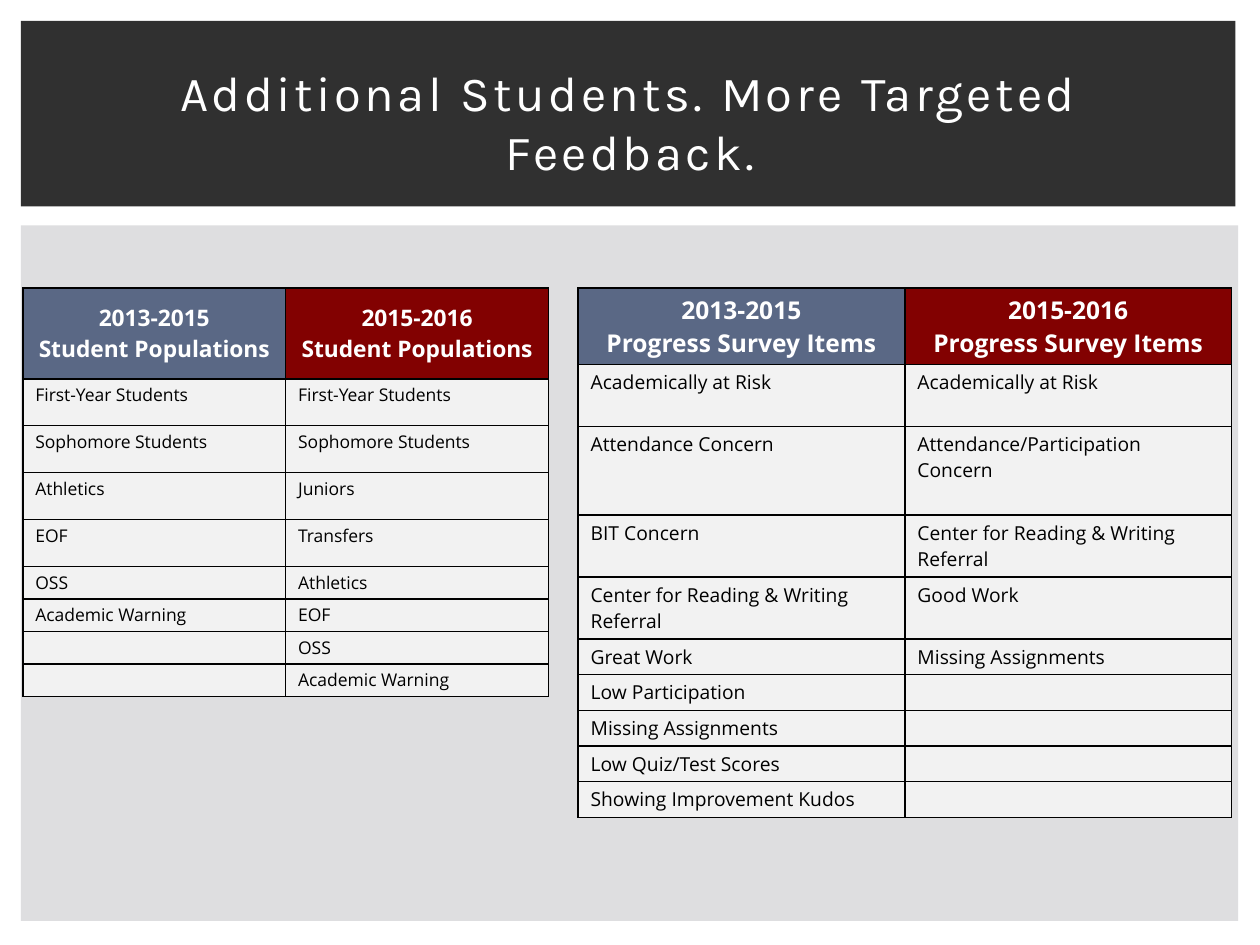
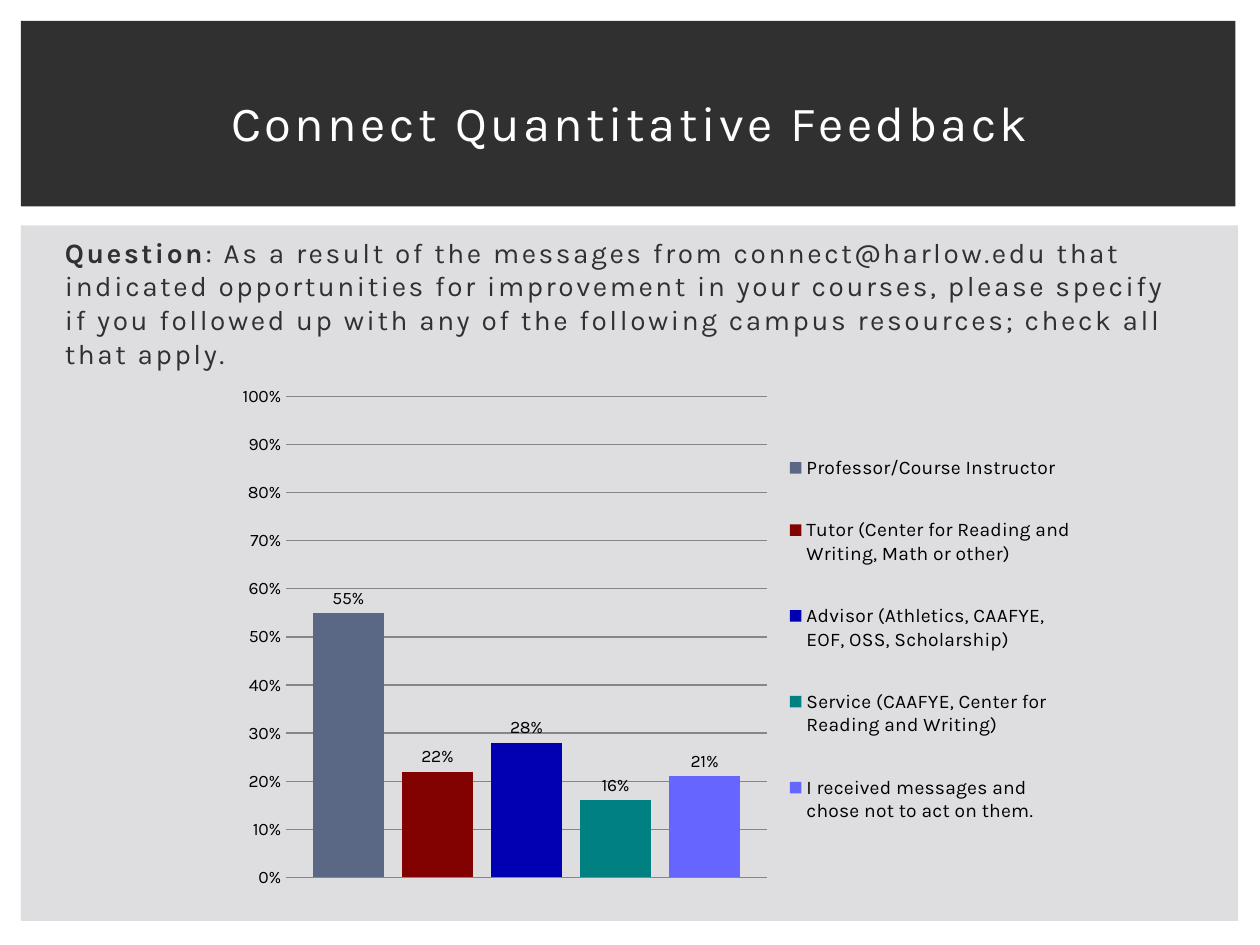
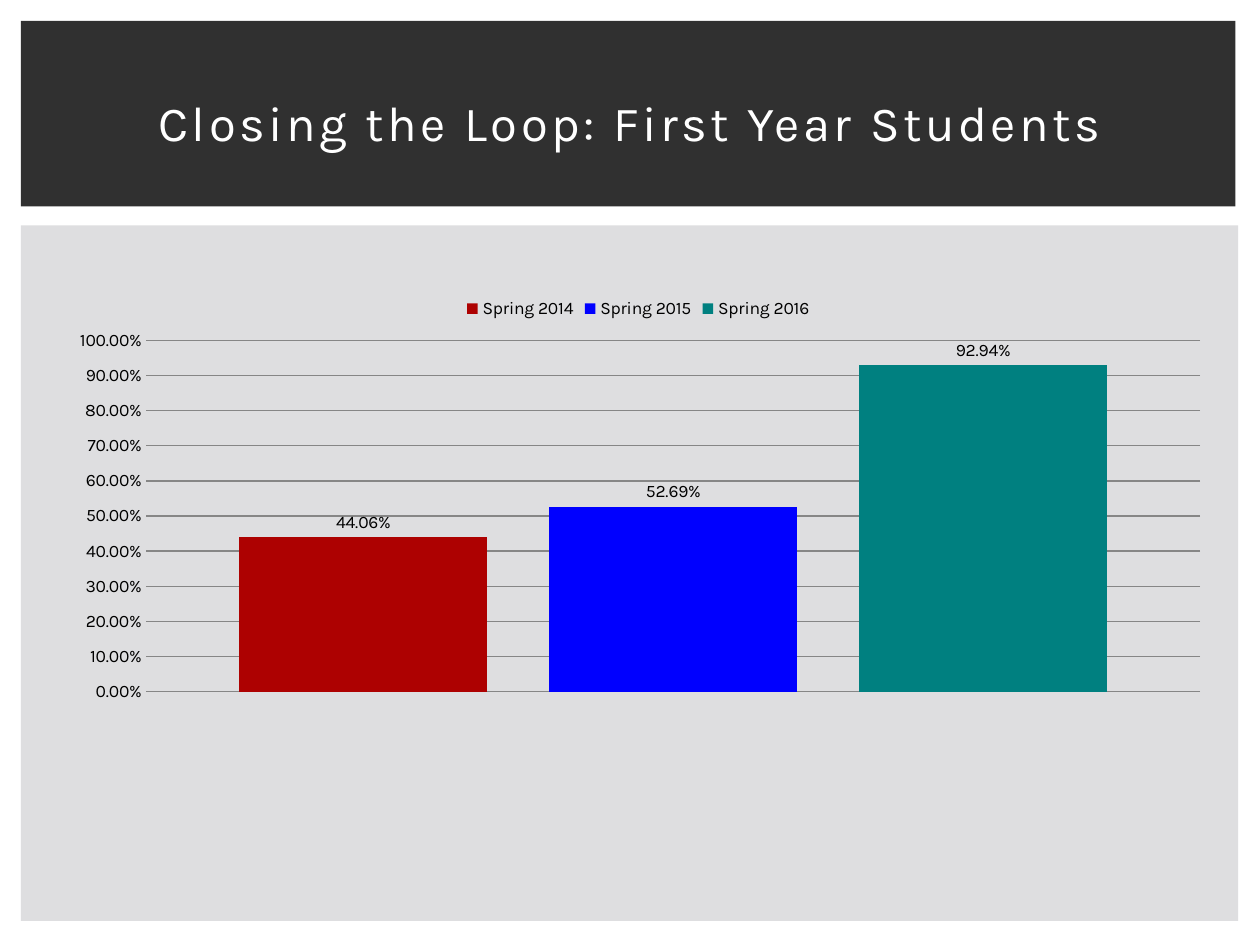
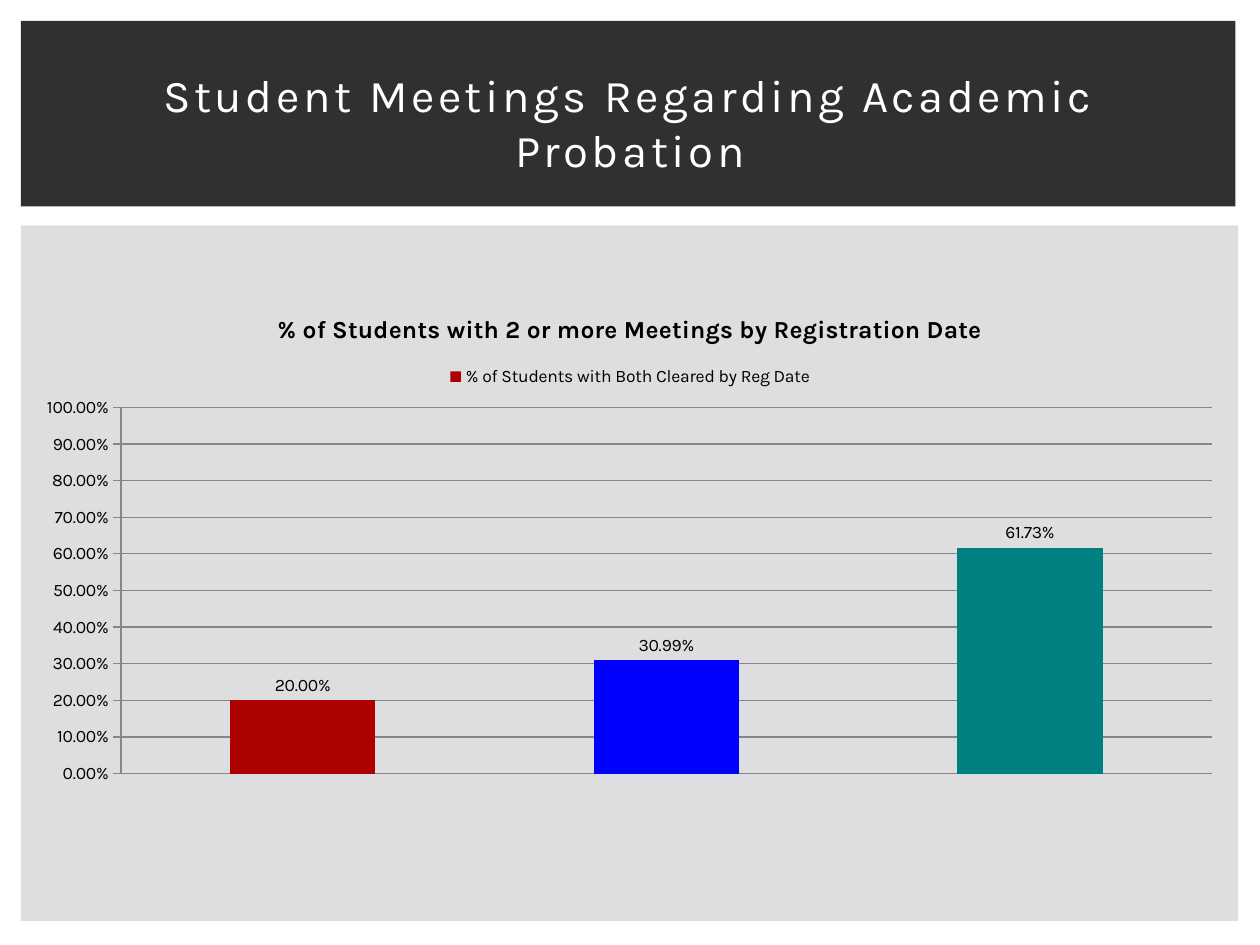
from dataclasses import dataclass

from lxml import etree
from pptx import Presentation
from pptx import util as u
from pptx.chart import data as chart_data
from pptx.dml.color import RGBColor
from pptx.enum import chart as charts, shapes, text
from pptx.oxml import ns


@dataclass(frozen=True)
class Theme:
    band: str = "303030"
    panel: str = "DEDEE0"
    white: str = "FFFFFF"
    black: str = "000000"
    grid: str = "868686"
    cell: str = "F2F2F2"
    slate: str = "5A6885"
    maroon: str = "820101"
    red: str = "AD0101"
    navy: str = "0000B2"
    blue: str = "0000FF"
    teal: str = "008080"
    violet: str = "6666FF"
    font: str = "Karla"
    table_font: str = "Open Sans"
    title: float = 28
    long_title: float = 26
    question: float = 16
    chart_title: float = 14
    legend: float = 11
    chart: float = 10


theme = Theme()
rgb = RGBColor.from_string


def style(paragraph, font, size, color, bold=False, spacing=0):
    for run in paragraph.runs:
        run.font.name = font
        run.font.size = u.Pt(size)
        run.font.color.rgb = rgb(color)
        run.font.bold = bold
        if spacing:
            run.font._element.set("spc", str(int(spacing * 100)))


def place(part, index, target, box):
    for old in part.findall(ns.qn("c:layout")):
        part.remove(old)
    layout = etree.Element(ns.qn("c:layout"))
    manual = etree.SubElement(layout, ns.qn("c:manualLayout"))
    settings = [("layoutTarget", target)] if target else []
    settings += [("xMode", "edge"), ("yMode", "edge"), *zip("xywh", box)]
    for tag, value in settings:
        etree.SubElement(manual, ns.qn(f"c:{tag}"), val=str(value))
    part.insert(index, layout)


prs = Presentation()
prs.slide_width, prs.slide_height = u.Pt(720), u.Pt(540)

titles = [
    ("Additional Students. More Targeted Feedback.", theme.title),
    ("Connect Quantitative Feedback", theme.title),
    ("Closing the Loop: First Year Students", theme.title),
    ("Student Meetings Regarding Academic Probation", theme.long_title),
]
slides = []
for wording, size in titles:
    slide = prs.slides.add_slide(prs.slide_layouts[6])
    for color, top, width, height in [
        (theme.panel, 128.8, 695.5, 397.4),
        (theme.band, 12, 694, 106),
    ]:
        block = slide.shapes.add_shape(
            shapes.MSO_SHAPE.RECTANGLE, u.Pt(12), u.Pt(top), u.Pt(width), u.Pt(height)
        )
        block.shadow.inherit = False
        block.fill.solid()
        block.fill.fore_color.rgb = rgb(color)
        block.line.fill.background()
    heading = slide.shapes.add_textbox(u.Pt(30), u.Pt(28), u.Pt(660), u.Pt(83)).text_frame
    heading.word_wrap = True
    heading.vertical_anchor = text.MSO_ANCHOR.MIDDLE
    heading.text = wording
    heading.paragraphs[0].alignment = text.PP_ALIGN.CENTER
    style(heading.paragraphs[0], theme.font, size, theme.white, spacing=2)
    slides.append(slide)

populations = [
    ("2013-2015\nStudent Populations", "2015-2016\nStudent Populations"),
    ("First-Year Students", "First-Year Students"),
    ("Sophomore Students", "Sophomore Students"),
    ("Athletics", "Juniors"),
    ("EOF", "Transfers"),
    ("OSS", "Athletics"),
    ("Academic Warning", "EOF"),
    ("", "OSS"),
    ("", "Academic Warning"),
]
survey_items = [
    ("2013-2015\nProgress Survey Items", "2015-2016\nProgress Survey Items"),
    ("Academically at Risk", "Academically at Risk"),
    ("Attendance Concern", "Attendance/Participation Concern"),
    ("BIT Concern", "Center for Reading & Writing Referral"),
    ("Center for Reading & Writing Referral", "Good Work"),
    ("Great Work", "Missing Assignments"),
    ("Low Participation", ""),
    ("Missing Assignments", ""),
    ("Low Quiz/Test Scores", ""),
    ("Showing Improvement Kudos", ""),
]
comparisons = [
    (populations, 13, 150.2, [51.8] + [26.8] * 4 + [18.6] * 4, 13, 10, 2.4),
    (survey_items, 330.3, 186.8, [43.5, 35.5, 50.5, 35.5, 35.5] + [20.4] * 5, 14, 11, 2.7),
]
for rows, left, column_width, heights, head_size, body_size, inset in comparisons:
    table = slides[0].shapes.add_table(
        len(rows), 2, u.Pt(left), u.Pt(164.7), u.Pt(2 * column_width), u.Pt(sum(heights))
    ).table
    for column in table.columns:
        column.width = u.Pt(column_width)
    for r, (entries, height) in enumerate(zip(rows, heights)):
        table.rows[r].height = u.Pt(height)
        for c, entry in enumerate(entries):
            cell = table.cell(r, c)
            cell.margin_left = cell.margin_right = u.Pt(7.2)
            cell.margin_top = cell.margin_bottom = u.Pt(inset)
            cell.text_frame.text = entry
            size = body_size if r else head_size
            for paragraph in cell.text_frame.paragraphs:
                style(paragraph, theme.table_font, size, theme.black if r else theme.white, r == 0)
                etree.SubElement(paragraph._p, ns.qn("a:endParaRPr"), sz=str(size * 100))
                if r == 0:
                    paragraph.alignment = text.PP_ALIGN.CENTER
            cell.vertical_anchor = text.MSO_ANCHOR.TOP if r else text.MSO_ANCHOR.MIDDLE
            for side in ("lnL", "lnR", "lnT", "lnB"):
                border = etree.SubElement(
                    cell._tc.get_or_add_tcPr(), ns.qn(f"a:{side}"), w=str(u.Pt(1))
                )
                ink = etree.SubElement(border, ns.qn("a:solidFill"))
                etree.SubElement(ink, ns.qn("a:srgbClr"), val=theme.black)
            cell.fill.solid()
            cell.fill.fore_color.rgb = rgb(theme.cell if r else (theme.slate, theme.maroon)[c])

resources = [
    ("Professor/Course Instructor", [0.55], [theme.slate]),
    ("Tutor (Center for Reading and Writing, Math or other)", [0.22], [theme.maroon]),
    ("Advisor (Athletics, CAAFYE, EOF, OSS, Scholarship)", [0.28], [theme.navy]),
    ("Service (CAAFYE, Center for Reading and Writing)", [0.16], [theme.teal]),
    ("I received messages and chose not to act on them.", [0.21], [theme.violet]),
]
springs = [
    ("Spring 2014", [0.4406], [theme.red]),
    ("Spring 2015", [0.5269], [theme.blue]),
    ("Spring 2016", [0.9294], [theme.teal]),
]
meetings = [
    (
        "% of Students with Both Cleared by Reg Date",
        [0.2, 0.3099, 0.6173],
        [theme.red, theme.blue, theme.teal],
    ),
]
top, right = charts.XL_LEGEND_POSITION.TOP, charts.XL_LEGEND_POSITION.RIGHT
graphs = [
    (slides[1], resources, (129, 214.6, 491, 298.8), "0%", right, theme.legend,
     (0.07, 0.04, 0.56, 0.92), None),
    (slides[2], springs, (30.2, 162.7, 669, 244.8), "0.00%", top, theme.chart,
     (0.08, 0.13, 0.9, 0.82), None),
    (slides[3], meetings, (13.7, 167, 692.6, 286.6), "0.00%", top, theme.chart,
     (0.08, 0.23, 0.9, 0.73), "% of Students with 2 or more Meetings by Registration Date"),
]
for slide, measures, box, number_format, legend_side, legend_size, plot_box, caption in graphs:
    figures = chart_data.CategoryChartData(number_format=number_format)
    figures.categories = [str(i + 1) for i in range(len(measures[0][1]))]
    for name, values, _ in measures:
        figures.add_series(name, values)
    chart = slide.shapes.add_chart(
        charts.XL_CHART_TYPE.COLUMN_CLUSTERED, *(u.Pt(length) for length in box), figures
    ).chart
    chart.font.name = theme.font
    chart.font.size = u.Pt(theme.chart)
    chart.font.color.rgb = rgb(theme.black)
    chart.has_title = bool(caption)
    if caption:
        chart.chart_title.text_frame.text = caption
        style(chart.chart_title.text_frame.paragraphs[0], theme.font, theme.chart_title,
              theme.black, True)

    chart.has_legend = True
    chart.legend.position = legend_side
    chart.legend.include_in_layout = False
    chart.legend.font.name = theme.font
    chart.legend.font.size = u.Pt(legend_size)
    if legend_side == right:
        place(chart.legend._element, 1, None, (0.65, 0.08, 0.34, 0.85))
    place(chart._chartSpace.chart.plotArea, 0, "inner", plot_box)

    chart.category_axis.visible = False
    scale = chart.value_axis
    scale.minimum_scale, scale.maximum_scale, scale.major_unit = 0, 1, 0.1
    scale.major_gridlines.format.line.color.rgb = rgb(theme.grid)
    scale.major_gridlines.format.line.width = u.Pt(0.75)
    scale.tick_labels.number_format = number_format
    scale.tick_labels.number_format_is_linked = False
    if caption:
        scale.major_tick_mark = charts.XL_TICK_MARK.OUTSIDE
        scale.format.line.color.rgb = rgb(theme.grid)
    else:
        scale.major_tick_mark = charts.XL_TICK_MARK.NONE
        scale.format.line.fill.background()

    plot = chart.plots[0]
    plot.vary_by_categories = False
    plot.gap_width, plot.overlap = (150, 0) if caption else (75, -25)
    for series, (_, _, colors) in zip(plot.series, measures):
        series.format.fill.solid()
        series.format.fill.fore_color.rgb = rgb(colors[0])
        for i, color in enumerate(colors[1:], 1):
            bar = series.points[i].format.fill
            bar.solid()
            bar.fore_color.rgb = rgb(color)
        labels = series.data_labels
        labels.show_value = True
        labels.position = charts.XL_LABEL_POSITION.OUTSIDE_END
        labels.number_format = number_format
        labels.number_format_is_linked = False

question = slides[1].shapes.add_textbox(u.Pt(30), u.Pt(131), u.Pt(660), u.Pt(222.5)).text_frame
question.word_wrap = True
prompt = question.paragraphs[0]
for wording in (
    "Question",
    ": As a result of the messages from connect@harlow.edu that indicated opportunities for "
    "improvement in your courses, please specify if you followed up with any of the following "
    "campus resources; check all that apply.",
):
    prompt.add_run().text = wording
style(prompt, theme.font, theme.question, theme.band, spacing=1.5)
prompt.runs[0].font.bold = True

prs.save("out.pptx")
